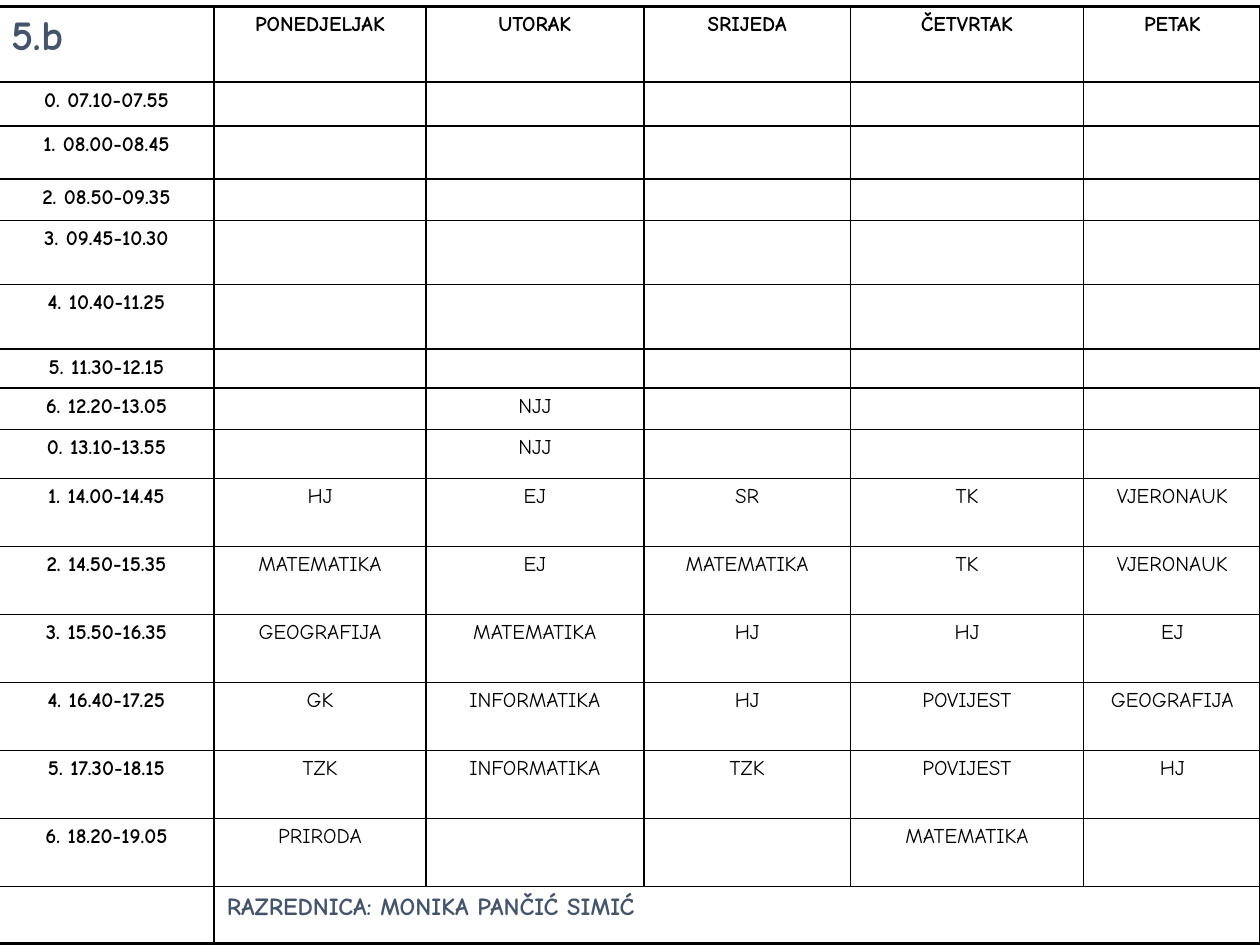
import lxml.etree
import pptx
import pptx.dml.color
import pptx.enum.text
import pptx.oxml.ns
import pptx.util

INCH = pptx.util.Inches
CENTER = pptx.enum.text.PP_ALIGN.CENTER
LEFT = pptx.enum.text.PP_ALIGN.LEFT
FONT = "Comic Neue"
CLASS_NAME = "5.b"
TEACHER = "RAZREDNICA: MONIKA PANČIĆ SIMIĆ"
DAYS = ["PONEDJELJAK", "UTORAK", "SRIJEDA", "ČETVRTAK", "PETAK"]
LESSONS = [
    ("0. 07.10-07.55", []),
    ("1. 08.00-08.45", []),
    ("2. 08.50-09.35", []),
    ("3. 09.45-10.30", []),
    ("4. 10.40-11.25", []),
    ("5. 11.30-12.15", []),
    ("6. 12.20-13.05", ["", "NJJ"]),
    ("0. 13.10-13.55", ["", "NJJ"]),
    ("1. 14.00-14.45", ["HJ", "EJ", "SR", "TK", "VJERONAUK"]),
    ("2. 14.50-15.35", ["MATEMATIKA", "EJ", "MATEMATIKA", "TK", "VJERONAUK"]),
    ("3. 15.50-16.35", ["GEOGRAFIJA", "MATEMATIKA", "HJ", "HJ", "EJ"]),
    ("4. 16.40-17.25", ["GK", "INFORMATIKA", "HJ", "POVIJEST", "GEOGRAFIJA"]),
    ("5. 17.30-18.15", ["TZK", "INFORMATIKA", "TZK", "POVIJEST", "HJ"]),
    ("6. 18.20-19.05", ["PRIRODA", "", "", "MATEMATIKA"]),
]
COLUMN_WIDTHS = [1.71, 1.68, 1.73, 1.64, 1.85, 1.41]
ROW_HEIGHTS = [0.6, 0.35, 0.42, 0.33, 0.51, 0.51, 0.31, 0.33, 0.39] + [0.54] * 6 + [0.45]
THIN, THICK = 1, 2.25
THIN_EDGE_ROW = 6
BLACK, SLATE = "000000", "44546A"
HEADING = {"size": pptx.util.Pt(12), "bold": True}
LESSON = {"size": pptx.util.Pt(12), "bold": False}
CLASS_FORMAT = {"size": pptx.util.Pt(24), "bold": True}
TEACHER_FORMAT = {"size": pptx.util.Pt(14), "bold": True}


def color(value):
    """Return the colour for a hex string."""
    return pptx.dml.color.RGBColor.from_string(value)


def add_child(parent, tag, **attributes):
    """Append a DrawingML element to its parent."""
    return lxml.etree.SubElement(parent, pptx.oxml.ns.qn(tag), attributes)


def write(cell, text, font_format, ink=BLACK, alignment=CENTER):
    """Put formatted text in a cell, or only its size when it is empty."""
    paragraph = cell.text_frame.paragraphs[0]
    paragraph.alignment = alignment
    if not text:
        add_child(paragraph._p, "a:endParaRPr", sz=str(font_format["size"].centipoints))
        return
    run = paragraph.add_run()
    run.text = text
    for name, value in {**font_format, "name": FONT}.items():
        setattr(run.font, name, value)
    run.font.color.rgb = color(ink)


def draw_borders(cell, widths):
    """Draw the cell's borders and clear its fill."""
    properties = cell._tc.get_or_add_tcPr()
    for side, width in widths.items():
        line = add_child(properties, f"a:ln{side}", w=str(pptx.util.Pt(width)))
        add_child(add_child(line, "a:solidFill"), "a:srgbClr", val=BLACK)
    cell.fill.background()


def build():
    """Build the timetable slide."""
    presentation = pptx.Presentation()
    presentation.slide_width, presentation.slide_height = INCH(10), INCH(7.5)
    slide = presentation.slides.add_slide(presentation.slide_layouts[6])
    last_row, last_column = len(ROW_HEIGHTS) - 1, len(COLUMN_WIDTHS) - 1
    table = slide.shapes.add_table(
        last_row + 1, last_column + 1, INCH(-0.01), INCH(0.05),
        INCH(sum(COLUMN_WIDTHS)), INCH(sum(ROW_HEIGHTS))).table
    table.first_row = table.horz_banding = False
    for column, width in zip(table.columns, COLUMN_WIDTHS):
        column.width = INCH(width)
    for row, height in zip(table.rows, ROW_HEIGHTS):
        row.height = INCH(height)

    write(table.cell(0, 0), CLASS_NAME, CLASS_FORMAT, SLATE, LEFT)
    for column, day in enumerate(DAYS, 1):
        write(table.cell(0, column), day, HEADING)
    for row, (time, subjects) in enumerate(LESSONS, 1):
        write(table.cell(row, 0), time, HEADING)
        padded = subjects + [""] * (len(DAYS) - len(subjects))
        for column, subject in enumerate(padded, 1):
            write(table.cell(row, column), subject, LESSON)
    write(table.cell(last_row, 0), "", LESSON)
    teacher_cell = table.cell(last_row, 1)
    teacher_cell.merge(table.cell(last_row, last_column))
    write(teacher_cell, TEACHER, TEACHER_FORMAT, SLATE, LEFT)

    for row in range(last_row + 1):
        for column in range(last_column + 1):
            right_edge = column == last_column and row != THIN_EDGE_ROW
            teacher_edge = row == last_row and column > 0
            draw_borders(table.cell(row, column), {
                "L": THICK if column == 0 else THIN,
                "R": THICK if right_edge or teacher_edge else THIN,
                "T": THICK if row == 0 else THIN,
                "B": THICK if row == last_row else THIN,
            })
    presentation.save("out.pptx")


if __name__ == "__main__":
    build()
